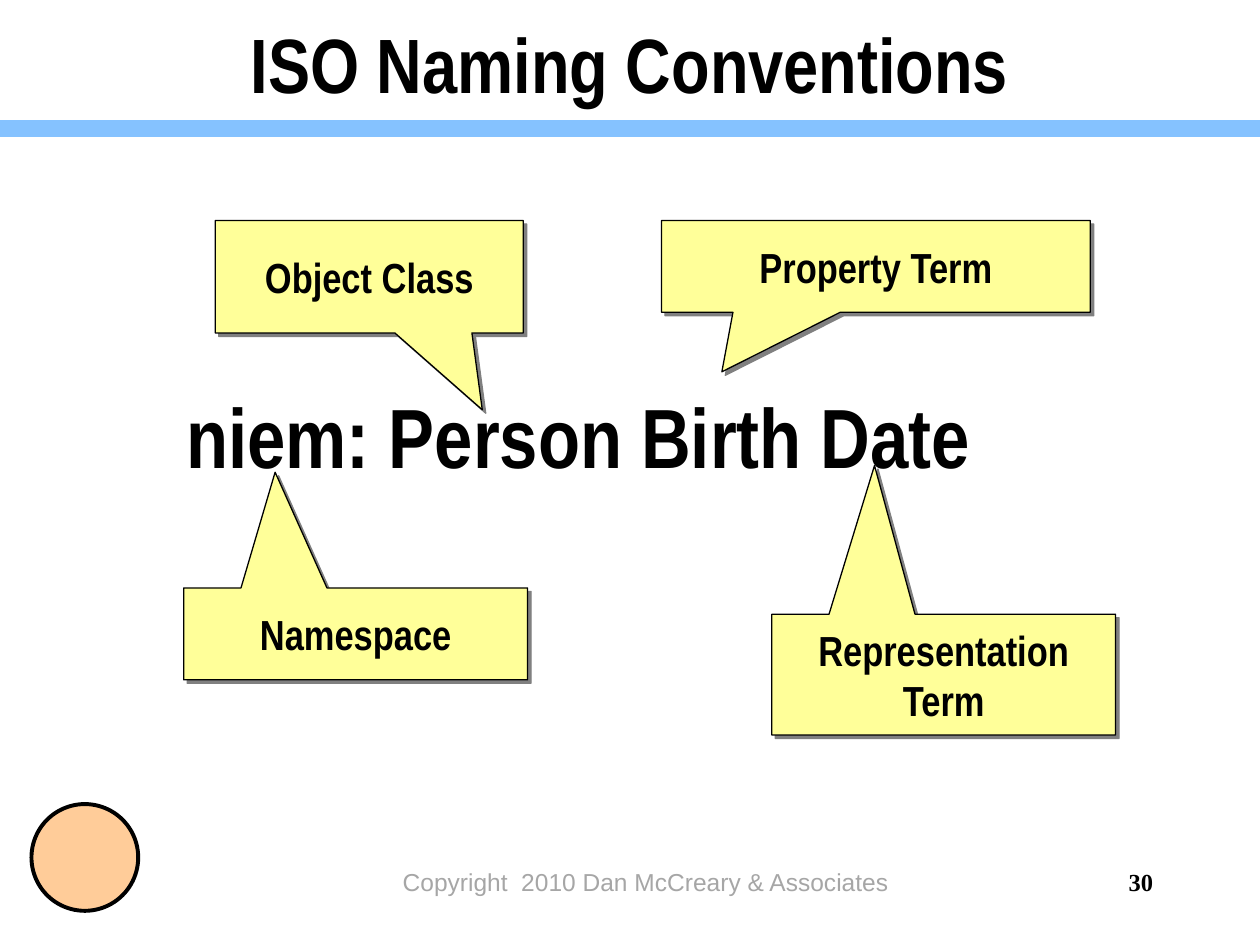
from lxml.etree import SubElement
from pptx import Presentation
from pptx.dml.color import RGBColor
from pptx.enum.shapes import MSO_CONNECTOR, MSO_SHAPE
from pptx.enum.text import MSO_ANCHOR, PP_ALIGN
from pptx.oxml.ns import qn
from pptx.util import Pt

BLACK = RGBColor(0x00, 0x00, 0x00)
GRAY = RGBColor(0xA6, 0xA6, 0xA6)
BLUE = RGBColor(0x85, 0xC2, 0xFF)
YELLOW = RGBColor(0xFF, 0xFF, 0x99)
ORANGE = RGBColor(0xFF, 0xCC, 0x99)
SHADOW = "808080"
NARROW = "Arial Narrow"

# Content: text, box (left, top, width, height), font, size, bold, colour,
# alignment, anchor, wrap
TEXTS = [
    ("ISO Naming Conventions", (54, 0, 612, 72), NARROW, 44, True, BLACK,
     PP_ALIGN.CENTER, MSO_ANCHOR.MIDDLE, True),
    ("30", (624, 492, 42, 36), "Times New Roman", 14, True, BLACK,
     PP_ALIGN.RIGHT, MSO_ANCHOR.TOP, True),
    ("Copyright  2010 Dan McCreary & Associates", (204, 492, 330, 36), "Arial",
     14, False, GRAY, PP_ALIGN.CENTER, MSO_ANCHOR.TOP, True),
    ("niem: Person Birth Date", (99.4, 216, 463, 65), NARROW, 48, True, BLACK,
     PP_ALIGN.LEFT, MSO_ANCHOR.TOP, False),
]
# Callouts: label, box, tip of the pointer (x, y)
CALLOUTS = [
    ("Object Class", (123, 126, 176, 64.3), (275.6, 234.2)),
    ("Representation Term", (441, 351, 196.5, 69), (499.75, 266)),
    ("Property Term", (378, 126, 245, 52.5), (412.5, 212.5)),
    ("Namespace", (105, 336, 196.5, 52.5), (157.25, 269.85)),
]


def write(shape, text, font, size, bold, color, alignment, anchor, wrap):
    frame = shape.text_frame
    frame.word_wrap = wrap
    frame.vertical_anchor = anchor
    paragraph = frame.paragraphs[0]
    paragraph.text = text
    paragraph.alignment = alignment
    paragraph.font.name = font
    paragraph.font.size = Pt(size)
    paragraph.font.bold = bold
    paragraph.font.color.rgb = color


def add_hard_shadow(shape):
    effects = shape._element.spPr.find(qn("a:effectLst"))
    shadow = SubElement(effects, qn("a:outerShdw"), dist=str(Pt(2.8)),
                        dir="2700000", algn="ctr", rotWithShape="0")
    SubElement(shadow, qn("a:srgbClr"), val=SHADOW)


def add_filled_shape(slide, kind, box, fill, line_width):
    shape = slide.shapes.add_shape(kind, *map(Pt, box))
    shape.shadow.inherit = False
    shape.fill.solid()
    shape.fill.fore_color.rgb = fill
    shape.line.color.rgb = BLACK
    shape.line.width = Pt(line_width)
    return shape


def add_callout(slide, label, box, tip):
    left, top, width, height = box
    shape = add_filled_shape(slide, MSO_SHAPE.RECTANGULAR_CALLOUT, box, YELLOW, 0.75)
    # The pointer is measured from the centre, as a share of the box
    shape.adjustments[0] = (tip[0] - left) / width - 0.5
    shape.adjustments[1] = (tip[1] - top) / height - 0.5
    add_hard_shadow(shape)
    write(shape, label, NARROW, 24, True, BLACK, PP_ALIGN.CENTER,
          MSO_ANCHOR.MIDDLE, True)


def main():
    presentation = Presentation()
    presentation.slide_width, presentation.slide_height = Pt(720), Pt(540)
    slide = presentation.slides.add_slide(presentation.slide_layouts[6])

    # Corner mark
    add_filled_shape(slide, MSO_SHAPE.OVAL, (18, 459.5, 61, 61), ORANGE, 2.25)

    # Bar under the title
    bar = slide.shapes.add_connector(MSO_CONNECTOR.STRAIGHT, Pt(0), Pt(73.5),
                                     Pt(720), Pt(73.5))
    bar.line.color.rgb = BLUE
    bar.line.width = Pt(10)
    SubElement(bar._element.spPr, qn("a:effectLst"))

    # Title, footer and the example name
    for text, box, *style in TEXTS:
        write(slide.shapes.add_textbox(*map(Pt, box)), text, *style)

    # Callouts naming each part of the example
    for callout in CALLOUTS:
        add_callout(slide, *callout)

    presentation.save("out.pptx")


if __name__ == "__main__":
    main()
